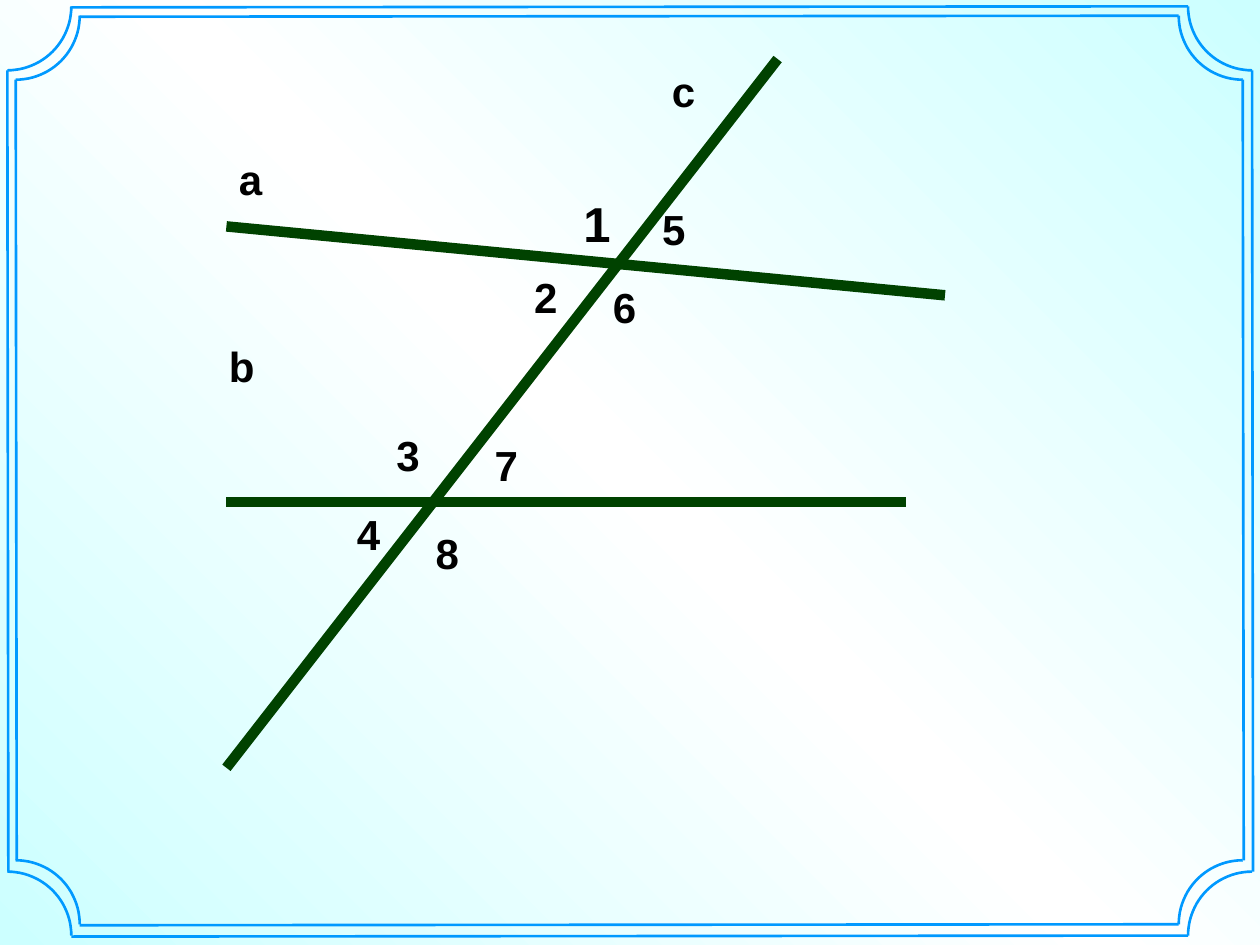
from copy import deepcopy
from dataclasses import dataclass
from math import cos, pi, sin

from lxml.etree import SubElement
from pptx import Presentation
from pptx.dml.color import RGBColor
from pptx.enum.shapes import MSO_CONNECTOR
from pptx.enum.text import MSO_AUTO_SIZE
from pptx.oxml.ns import qn
from pptx.util import Inches, Pt

COLUMNS, ROWS = 128, 96
ARC_STEPS = 24
SLANT = 0.1


@dataclass(frozen=True)
class Theme:
    font: str = "Arial"
    edge: RGBColor = RGBColor(0xCC, 0xFF, 0xFF)
    middle: RGBColor = RGBColor(0xFF, 0xFF, 0xFF)
    ray: RGBColor = RGBColor(0x00, 0x42, 0x00)
    frame: RGBColor = RGBColor(0x00, 0x99, 0xFF)
    text: RGBColor = RGBColor(0x00, 0x00, 0x00)
    label_size: int = 24
    large_size: int = 28
    ray_width: float = 6
    frame_width: float = 1.5


class SlideBuilder:
    """Draws on one slide; lengths are columns and rows of the grid."""

    def __init__(self, presentation, theme):
        self.theme = theme
        self.slide = presentation.slides.add_slide(presentation.slide_layouts[6])
        self.cell = presentation.slide_width / COLUMNS

    def grid(self, *lengths):
        return [round(length * self.cell) for length in lengths]

    def background(self):
        fill = self.slide.background.fill
        fill.gradient()
        fill.gradient_angle = 45
        first_stop = self.slide.background._cSld.find(".//" + qn("a:gs"))
        first_stop.addnext(deepcopy(first_stop))
        colors = (self.theme.edge, self.theme.middle, self.theme.edge)
        for stop, position, color in zip(fill.gradient_stops, (0, 0.5, 1), colors):
            stop.position = position
            stop.color.rgb = color

    def line(self, start, end):
        connector = self.slide.shapes.add_connector(
            MSO_CONNECTOR.STRAIGHT, *self.grid(*start, *end))
        connector.line.color.rgb = self.theme.ray
        connector.line.width = Pt(self.theme.ray_width)
        SubElement(connector._element.spPr, qn("a:effectLst"))

    def label(self, text, column, row, width=4, size=None):
        size = size or self.theme.label_size
        height = 7.3 if size == self.theme.large_size else 6.4
        box = self.slide.shapes.add_textbox(*self.grid(column, row, width, height))
        frame = box.text_frame
        frame.word_wrap = True
        frame.auto_size = MSO_AUTO_SIZE.SHAPE_TO_FIT_TEXT
        frame.text = text
        font = frame.paragraphs[0].runs[0].font
        font.name = self.theme.font
        font.size = Pt(size)
        font.bold = True
        font.color.rgb = self.theme.text

    def outline(self, points):
        start, *others = [self.grid(*point) for point in points]
        freeform = self.slide.shapes.build_freeform(*start)
        freeform.add_line_segments(others, close=False)
        shape = freeform.convert_to_shape()
        shape.shadow.inherit = False
        shape.fill.background()
        shape.line.color.rgb = self.theme.frame
        shape.line.width = Pt(self.theme.frame_width)

    def frame(self, left, top, right, bottom, radius):
        """Outline a rectangle with corners scooped inwards."""
        for row in (top, bottom):
            self.outline([(right - radius, row), (left + radius, row + SLANT)])
        for column in (left, right):
            self.outline([(column + SLANT, bottom - radius), (column, top + radius)])
        for column, across in ((left, radius), (right, -radius)):
            for row, down in ((top, radius), (bottom, -radius)):
                angles = [pi / 2 * step / ARC_STEPS for step in range(ARC_STEPS + 1)]
                self.outline([(column + across * cos(angle), row + down * sin(angle))
                              for angle in angles])


def main():
    presentation = Presentation()
    presentation.slide_width = Inches(10)
    presentation.slide_height = Inches(10 * ROWS / COLUMNS)
    theme = Theme()
    builder = SlideBuilder(presentation, theme)
    builder.background()

    line_a = (23, 23), (96, 30)
    line_b = (23, 51), (92, 51)
    transversal_c = (79, 6), (23, 78)
    for start, end in (line_a, line_b, transversal_c):
        builder.line(start, end)

    angles = {"6": (61, 28), "2": (53, 27), "3": (39, 43), "4": (35, 51),
              "5": (66, 20), "7": (49, 44), "8": (43, 53, 5),
              "1": (58, 19, 4, theme.large_size)}
    line_names = {"a": (23, 15), "b": (22, 34), "c": (67, 6)}
    for text, place in (angles | line_names).items():
        builder.label(text, *place)

    builder.frame(1.6, 1.6, 126.25, 93.9, radius=6.5)
    builder.frame(0.75, 0.65, 127.2, 95.05, radius=6.5)
    presentation.save("out.pptx")


if __name__ == "__main__":
    main()
